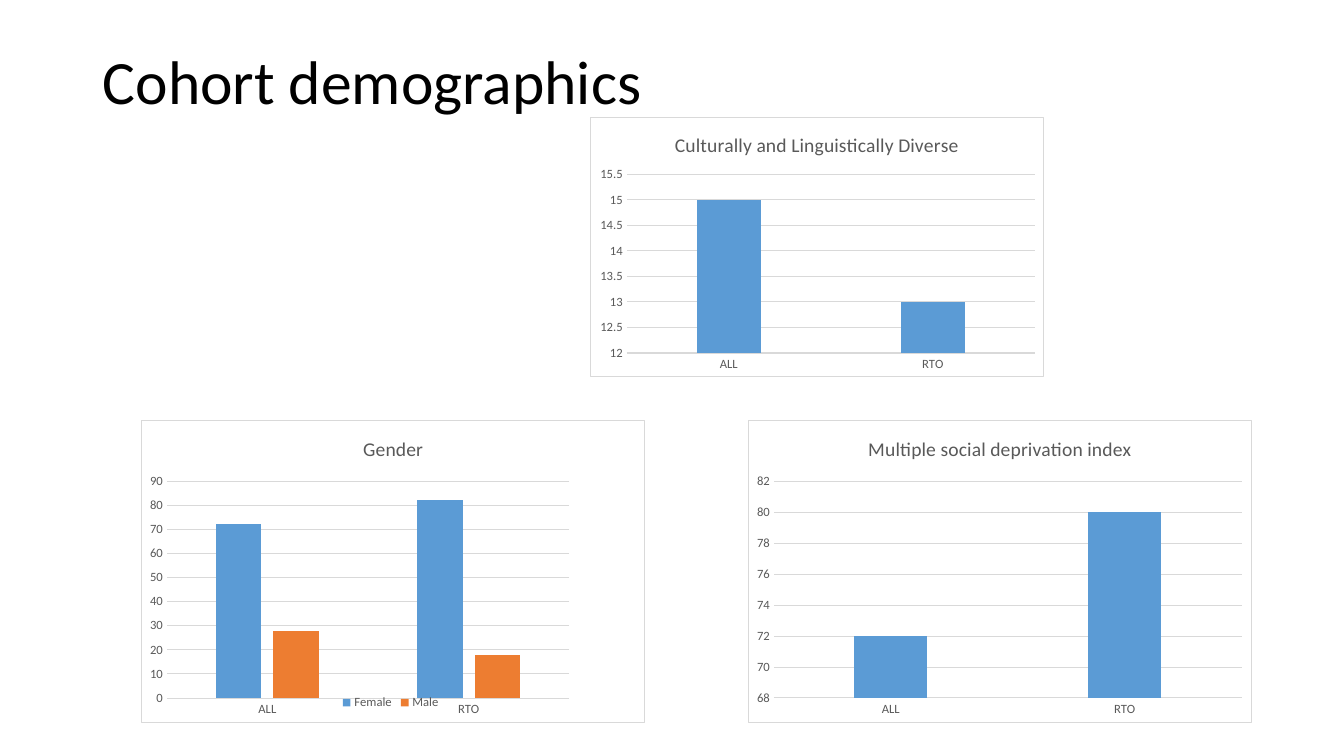
from lxml import etree
from pptx import Presentation
from pptx import util as u
from pptx.chart.data import CategoryChartData
from pptx.dml.color import RGBColor
from pptx.enum import chart as ch, text
from pptx.oxml import parse_xml
from pptx.oxml.ns import nsdecls, qn

BLACK = RGBColor(0x00, 0x00, 0x00)
GREY = RGBColor(0x59, 0x59, 0x59)
RULE = RGBColor(0xD9, 0xD9, 0xD9)
BLUE = RGBColor(0x5B, 0x9B, 0xD5)
ORANGE = RGBColor(0xED, 0x7D, 0x31)
GROUPS = ["ALL", "RTO"]


def put(item, values):
    for name, value in values.items():
        setattr(item, name, value)


class Deck:
    face = "Calibri"
    colors = [BLUE, ORANGE]

    def __init__(self, wide, high):
        self.file = Presentation()
        put(self.file, {"slide_width": u.Inches(wide), "slide_height": u.Inches(high)})
        self.slide = self.file.slides.add_slide(self.file.slide_layouts[5])

    def font(self, font, size, color):
        put(font, {"name": self.face, "size": u.Pt(size), "bold": False})
        font.color.rgb = color

    def rule(self, line):
        line.color.rgb = RULE
        line.width = u.Pt(0.75)

    def title(self, words, box):
        head = self.slide.shapes.title
        put(head, dict(zip(("left", "top", "width", "height"), map(u.Inches, box))))
        frame = head.text_frame
        put(frame, {"text": words, "word_wrap": True,
                    "auto_size": text.MSO_AUTO_SIZE.NONE,
                    "vertical_anchor": text.MSO_ANCHOR.MIDDLE})
        para = frame.paragraphs[0]
        put(para, {"alignment": text.PP_ALIGN.LEFT, "line_spacing": 0.9})
        self.font(para.runs[0].font, 44, BLACK)

    def border(self, chart):
        chart._chartSpace.find(qn("c:chart")).addnext(parse_xml(
            f'<c:spPr {nsdecls("c", "a")}>'
            '<a:solidFill><a:srgbClr val="FFFFFF"/></a:solidFill>'
            f'<a:ln w="9525"><a:solidFill><a:srgbClr val="{RULE}"/></a:solidFill></a:ln>'
            '</c:spPr>'))

    def place(self, part, index, box, inner=False):
        for old in part.findall(qn("c:layout")):
            part.remove(old)
        layout = parse_xml(f'<c:layout {nsdecls("c")}><c:manualLayout/></c:layout>')
        items = [("layoutTarget", "inner")] if inner else []
        items += [("xMode", "edge"), ("yMode", "edge"), *zip("xywh", box)]
        for name, value in items:
            etree.SubElement(layout[0], qn(f"c:{name}")).set("val", str(value))
        part.insert(index, layout)

    def legend(self, chart, box):
        chart.has_legend = True
        put(chart.legend, {"position": ch.XL_LEGEND_POSITION.RIGHT,
                           "include_in_layout": False})
        self.font(chart.legend.font, 9, GREY)
        self.place(chart.legend._element, 1, box)

    def bars(self, name, box, series, scale, plot):
        data = CategoryChartData()
        data.categories = GROUPS
        for label, values in series.items():
            data.add_series(label, values)
        chart = self.slide.shapes.add_chart(
            ch.XL_CHART_TYPE.COLUMN_CLUSTERED, *map(u.Inches, box), data).chart
        self.font(chart.font, 10, BLACK)
        put(chart, {"has_legend": False, "has_title": True})
        chart.chart_title.include_in_layout = False
        head = chart.chart_title.text_frame
        head.text = name
        self.font(head.paragraphs[0].runs[0].font, 14, GREY)
        put(chart.plots[0], {"gap_width": 219, "overlap": -27,
                             "vary_by_categories": False})
        for bar, color in zip(chart.plots[0].series, self.colors):
            bar.format.fill.solid()
            bar.format.fill.fore_color.rgb = color
            bar.invert_if_negative = False
        for axis in (chart.category_axis, chart.value_axis):
            put(axis, {"major_tick_mark": ch.XL_TICK_MARK.NONE,
                       "minor_tick_mark": ch.XL_TICK_MARK.NONE})
            self.font(axis.tick_labels.font, 9, GREY)
        self.rule(chart.category_axis.format.line)
        low, high, step = scale
        put(axis, {"minimum_scale": low, "maximum_scale": high, "major_unit": step,
                   "has_major_gridlines": True})
        axis.format.line.fill.background()
        self.rule(axis.major_gridlines.format.line)
        self.place(chart._chartSpace.chart.plotArea, 0, plot, True)
        self.border(chart)
        return chart


def main():
    deck = Deck(13.33, 7.5)
    deck.title("Cohort demographics", (0.92, 0.4, 11.5, 0.88))
    gender = deck.bars("Gender", (1.4, 4.17, 5, 3),
                       {"Female": (72, 82), "Male": (28, 18)},
                       (0, 90, 10), (0.05, 0.2, 0.8, 0.72))
    deck.legend(gender, (0.39, 0.9, 0.21, 0.07))
    deck.bars("Culturally and Linguistically Diverse", (5.85, 1.16, 4.51, 2.58),
              {"Series 1": (15, 13)}, (12, 15.5, 0.5), (0.08, 0.22, 0.9, 0.69))
    deck.bars("Multiple social deprivation index", (7.42, 4.17, 5, 3),
              {"Series 1": (72, 80)}, (68, 82, 2), (0.05, 0.2, 0.93, 0.72))
    deck.file.save("out.pptx")


if __name__ == "__main__":
    main()
